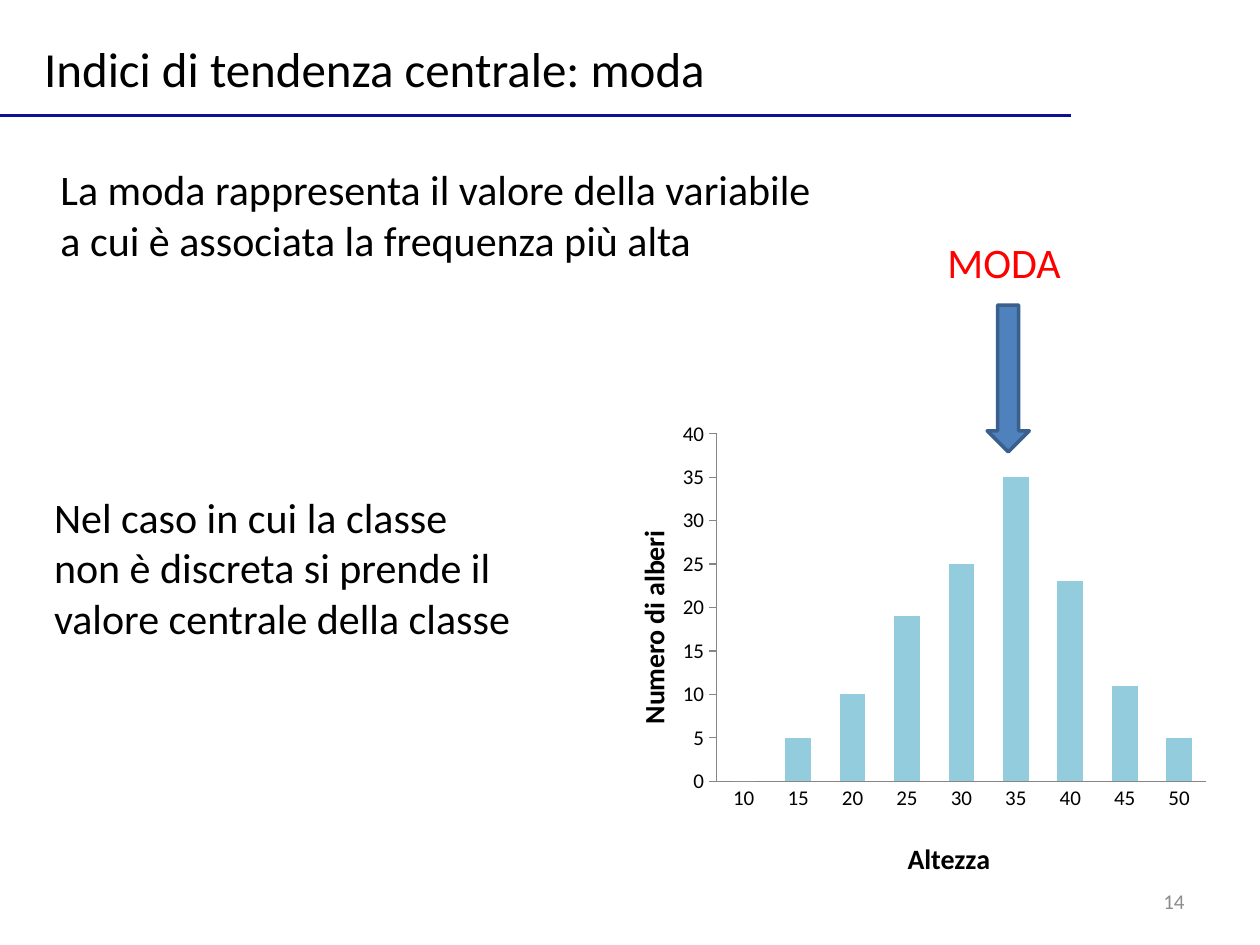
from lxml import etree
from pptx import Presentation
from pptx.chart.data import CategoryChartData
from pptx.dml.color import RGBColor
from pptx.enum.chart import XL_CHART_TYPE as Chart, XL_TICK_MARK as Tick
from pptx.enum.shapes import MSO_CONNECTOR as Conn, MSO_SHAPE as Shape
from pptx.enum.text import MSO_ANCHOR as Anchor, PP_ALIGN as Align
from pptx.oxml.ns import qn
from pptx.util import Cm, Pt

FONT = "Calibri"
TEXTS = [
    (["14"], (18.21, 17.65, 5.92, 1.02), 12, "8C8C8C", Align.RIGHT, Anchor.MIDDLE, True),
    (["Indici di tendenza centrale: moda"],
     (0.64, 0.64, 13.97, 1.45), 28, "000000", Align.LEFT, Anchor.MIDDLE, False),
    (["La moda rappresenta il valore della variabile",
      "a cui è associata la frequenza più alta"],
     (0.97, 3.18, 15.98, 2.31), 24, "000000", Align.LEFT, Anchor.TOP, False),
    (["Nel caso in cui la classe non è discreta si prende il valore centrale della classe"],
     (0.84, 9.78, 9.73, 3.33), 24, "000000", Align.LEFT, Anchor.TOP, True),
    (["MODA"], (18.85, 4.65, 3.38, 1.27), 24, "FF0000", Align.LEFT, Anchor.TOP, True),
]
TREES = {"10": 0, "15": 5, "20": 10, "25": 19, "30": 25, "35": 35, "40": 23, "45": 11, "50": 5}
CHART_BOX = (12.07, 8.26, 12.5, 9.73)
PLOT = {"layoutTarget": "inner", "xMode": "edge", "yMode": "edge",
        "x": 0.19, "y": 0.05, "w": 0.79, "h": 0.72}
AXIS_TITLES = {"Altezza": (0.49, 0.88), "Numero di alberi": (0.05, 0.24)}


def rgb(code):
    """Turn a hex string into a colour."""
    return RGBColor.from_string(code)


def box(lengths):
    """Turn a tuple of centimetres into lengths."""
    return [Cm(v) for v in lengths]


def add_text(s, lines, place, size, color, align, anchor, wrap):
    """Add a text box with one paragraph per line."""
    tf = s.shapes.add_textbox(*box(place)).text_frame
    tf.word_wrap, tf.vertical_anchor = wrap, anchor
    tf.text = "\n".join(lines)
    for p in tf.paragraphs:
        p.alignment = align
        p.font.name, p.font.size, p.font.color.rgb = FONT, Pt(size), rgb(color)


def set_layout(parent, index, values):
    """Place a chart part by hand, in fractions of the chart."""
    for old in parent.findall(qn("c:layout")):
        parent.remove(old)
    layout = etree.Element(qn("c:layout"))
    manual = etree.SubElement(layout, qn("c:manualLayout"))
    for name, value in values.items():
        etree.SubElement(manual, qn(f"c:{name}")).set("val", str(value))
    parent.insert(index, layout)


def add_histogram(s):
    """Add the column chart of tree heights."""
    data = CategoryChartData()
    data.categories = list(TREES)
    data.add_series("Series 1", list(TREES.values()))
    chart = s.shapes.add_chart(Chart.COLUMN_CLUSTERED, *box(CHART_BOX), data).chart
    chart.has_legend = chart.has_title = False
    chart.font.name, chart.font.size, chart.font.color.rgb = FONT, Pt(12), rgb("000000")
    plot = chart.plots[0]
    plot.gap_width, plot.vary_by_categories = 111, False
    fill = plot.series[0].format.fill
    fill.solid()
    fill.fore_color.rgb = rgb("93CDDD")
    cat, val = chart.category_axis, chart.value_axis
    val.minimum_scale, val.maximum_scale, val.major_unit = 0, 40, 5
    for axis, tick, (title, (x, y)) in zip((cat, val), (Tick.NONE, Tick.OUTSIDE), AXIS_TITLES.items()):
        axis.has_major_gridlines = False
        axis.major_tick_mark, axis.minor_tick_mark = tick, Tick.NONE
        axis.format.line.color.rgb = rgb("868686")
        p = axis.axis_title.text_frame.paragraphs[0]
        p.text = title
        p.font.name, p.font.size, p.font.bold = FONT, Pt(16), True
        p.font.color.rgb = rgb("000000")
        set_layout(axis.axis_title._element, 1, {"xMode": "edge", "yMode": "edge", "x": x, "y": y})
    set_layout(chart._chartSpace.chart.plotArea, 0, PLOT)


def main():
    """Build the slide about the mode and save it."""
    prs = Presentation()
    prs.slide_width, prs.slide_height = Cm(25.4), Cm(19.05)
    s = prs.slides.add_slide(prs.slide_layouts[6])
    rule = s.shapes.add_connector(Conn.STRAIGHT, *box((0, 2.33, 21.59, 2.33)))
    rule.line.color.rgb, rule.line.width = rgb("0C1290"), Pt(2)
    etree.SubElement(rule._element.spPr, qn("a:effectLst"))
    add_histogram(s)
    arrow = s.shapes.add_shape(Shape.DOWN_ARROW, *box((19.9, 6.15, 0.85, 2.96)))
    arrow.shadow.inherit = False
    arrow.fill.solid()
    arrow.fill.fore_color.rgb = rgb("4F81BD")
    arrow.line.color.rgb, arrow.line.width = rgb("3A5F8C"), Pt(2)
    for text in TEXTS:
        add_text(s, *text)
    prs.save("out.pptx")


if __name__ == "__main__":
    main()
